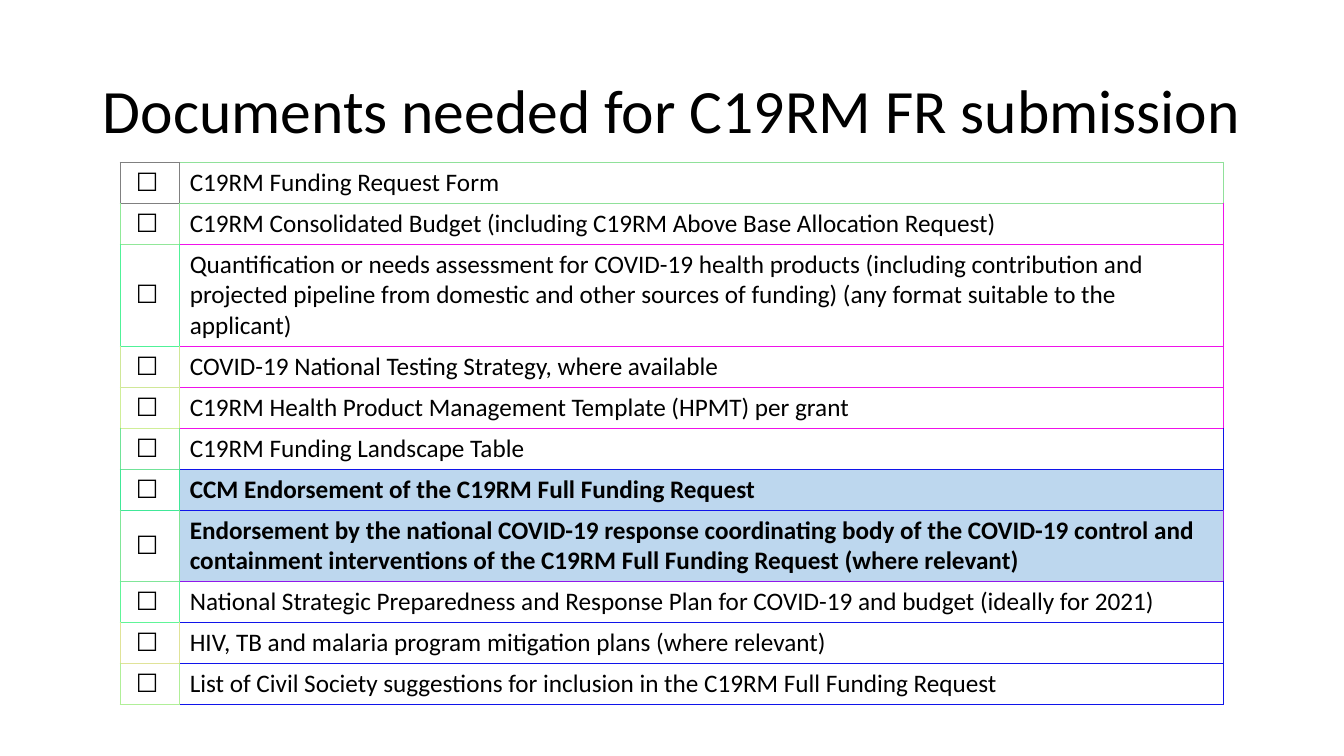
from dataclasses import dataclass

from lxml import etree
from pptx import Presentation
from pptx.dml.color import RGBColor
from pptx.enum.text import MSO_ANCHOR, MSO_AUTO_SIZE, PP_ALIGN
from pptx.oxml.ns import qn
from pptx.util import Pt

MIDDLE = MSO_ANCHOR.MIDDLE
NO_AUTOFIT = MSO_AUTO_SIZE.NONE
LEFT, CENTER = PP_ALIGN.LEFT, PP_ALIGN.CENTER
TITLE_ONLY = 5


@dataclass(frozen=True)
class Theme:
    font: str = "Calibri"
    title_size: float = 44
    body_size: float = 18
    text: str = "000000"
    highlight: str = "BDD7EE"
    gray: str = "808080"
    mint: str = "90E19A"
    magenta: str = "F012EA"
    blue: str = "1014EA"
    violet: str = "9018EA"
    border_width: float = 0.75


THEME = Theme()
TITLE = "Documents needed for C19RM FR submission"
CHECKBOX = "☐ "
SINGLE_ROW, TALL_ROW = 27.36, 45.36
COLUMN_WIDTHS = (42.7, 745.5)

# document, row height, checkbox border, document border, highlighted
DOCUMENTS = [
    ("C19RM Funding Request Form", SINGLE_ROW, THEME.gray, THEME.mint, False),
    ("C19RM Consolidated Budget (including C19RM Above Base Allocation Request)",
     SINGLE_ROW, "90E998", THEME.magenta, False),
    ("Quantification or needs assessment for COVID-19 health products (including "
     "contribution and projected pipeline from domestic and other sources of funding) "
     "(any format suitable to the applicant)",
     TALL_ROW, "50F298", THEME.magenta, False),
    ("COVID-19 National Testing Strategy, where available",
     SINGLE_ROW, "D0E798", THEME.magenta, False),
    ("C19RM Health Product Management Template (HPMT) per grant",
     SINGLE_ROW, "D0EE98", THEME.magenta, False),
    ("C19RM Funding Landscape Table", SINGLE_ROW, "70E398", THEME.blue, False),
    ("CCM Endorsement of the C19RM Full Funding Request",
     SINGLE_ROW, "40E898", THEME.blue, True),
    ("Endorsement by the national COVID-19 response coordinating body of the COVID-19 "
     "control and containment interventions of the C19RM Full Funding Request "
     "(where relevant)",
     TALL_ROW, "80E698", THEME.violet, True),
    ("National Strategic Preparedness and Response Plan for COVID-19 and budget "
     "(ideally for 2021)",
     SINGLE_ROW, "60F598", THEME.blue, False),
    ("HIV, TB and malaria program mitigation plans (where relevant)",
     SINGLE_ROW, "E0E398", THEME.blue, False),
    ("List of Civil Society suggestions for inclusion in the C19RM Full Funding Request",
     SINGLE_ROW, "B0EF98", THEME.blue, False),
]


def apply(target, values):
    for name, value in values.items():
        setattr(target, name, value)


def write(frame, text, size, alignment, bold=False):
    frame.text = text
    paragraph = frame.paragraphs[0]
    paragraph.alignment = alignment
    font = paragraph.runs[0].font
    apply(font, {"name": THEME.font, "size": Pt(size), "bold": bold})
    font.color.rgb = RGBColor.from_string(THEME.text)


def add_title(slide):
    title = slide.shapes.title
    apply(title, {"left": Pt(66.24), "top": Pt(28.75),
                  "width": Pt(828), "height": Pt(104.4)})
    frame = title.text_frame
    apply(frame, {"vertical_anchor": MIDDLE, "word_wrap": True,
                  "auto_size": NO_AUTOFIT})
    write(frame, TITLE, THEME.title_size, LEFT)
    frame.paragraphs[0].line_spacing = 0.9


def set_borders(cell, left, right, top, bottom):
    properties = cell._tc.get_or_add_tcPr()
    sides = {"a:lnL": left, "a:lnR": right, "a:lnT": top, "a:lnB": bottom}
    for side, color in sides.items():
        line = etree.SubElement(properties, qn(side), w=str(Pt(THEME.border_width)))
        fill = etree.SubElement(line, qn("a:solidFill"))
        etree.SubElement(fill, qn("a:srgbClr"), val=color)


def fill_cell(cell, text, alignment, borders, highlighted=False):
    cell.vertical_anchor = MIDDLE
    write(cell.text_frame, text, THEME.body_size, alignment, highlighted)
    set_borders(cell, *borders)
    if highlighted:
        cell.fill.solid()
        cell.fill.fore_color.rgb = RGBColor.from_string(THEME.highlight)
    else:
        cell.fill.background()


def add_checklist(slide):
    height = sum(document[1] for document in DOCUMENTS)
    checklist = slide.shapes.add_table(
        len(DOCUMENTS), len(COLUMN_WIDTHS), Pt(85.7), Pt(116),
        Pt(sum(COLUMN_WIDTHS)), Pt(height)).table
    apply(checklist, {"first_row": False, "horz_banding": False})
    for column, width in zip(checklist.columns, COLUMN_WIDTHS):
        column.width = Pt(width)

    box_above, document_above = THEME.gray, THEME.mint
    for index, (text, row_height, box, border, highlighted) in enumerate(DOCUMENTS):
        checklist.rows[index].height = Pt(row_height)
        fill_cell(checklist.cell(index, 0), CHECKBOX, CENTER,
                  (box, box, box_above, box))
        fill_cell(checklist.cell(index, 1), text, LEFT,
                  (box, border, document_above, border), highlighted)
        box_above, document_above = box, border


def main():
    presentation = Presentation()
    apply(presentation, {"slide_width": Pt(960), "slide_height": Pt(540)})
    slide = presentation.slides.add_slide(presentation.slide_layouts[TITLE_ONLY])
    add_title(slide)
    add_checklist(slide)
    presentation.save("out.pptx")


if __name__ == "__main__":
    main()
